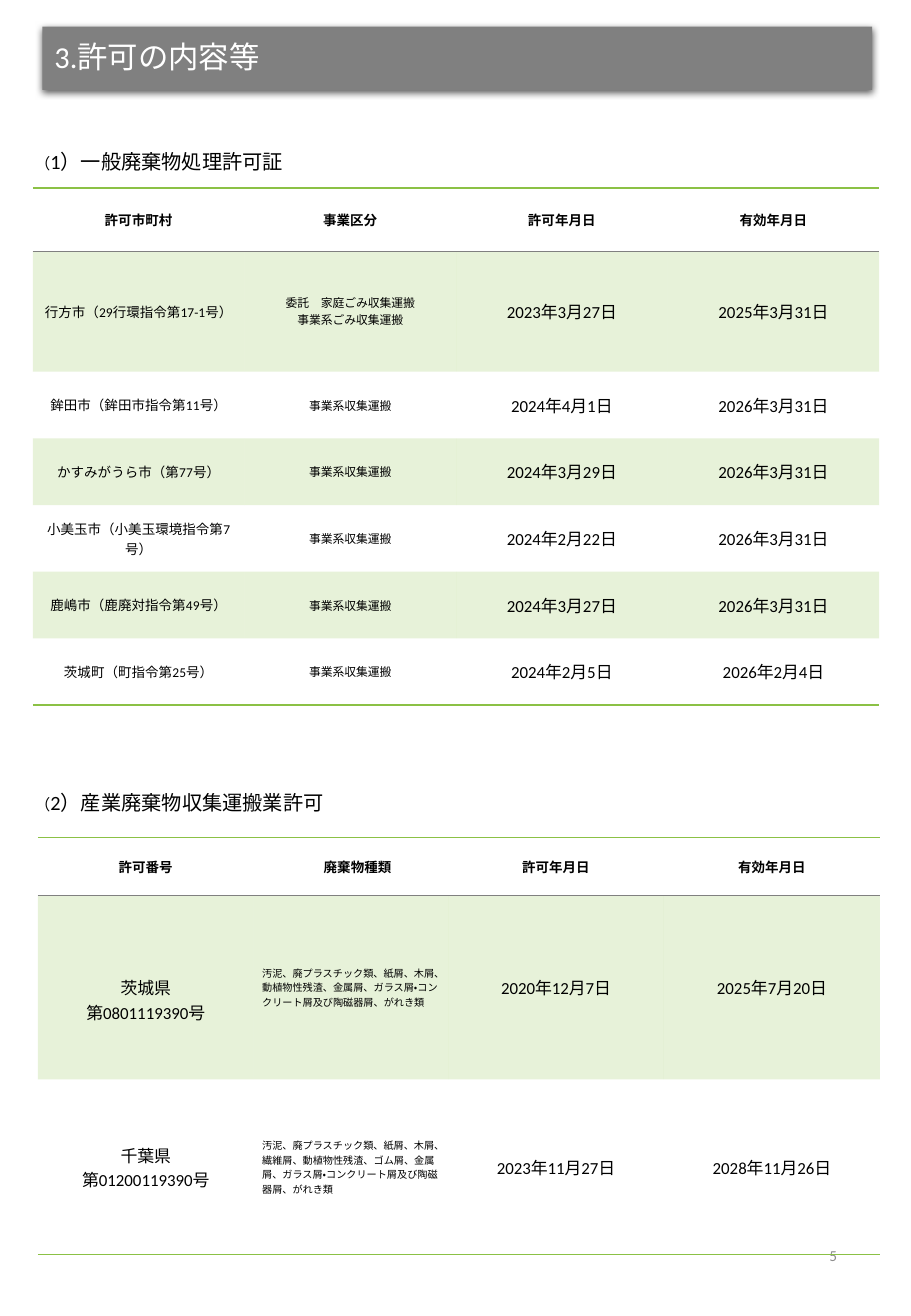
from lxml.etree import SubElement
from pptx import Presentation
from pptx.dml.color import RGBColor
from pptx.enum.lang import MSO_LANGUAGE_ID
from pptx.enum.shapes import MSO_SHAPE
from pptx.enum.text import MSO_ANCHOR, PP_ALIGN
from pptx.oxml.ns import qn
from pptx.util import Pt

GREEN = RGBColor(0x8B, 0xC1, 0x45)
GRAY = RGBColor(0x80, 0x80, 0x80)
PAGE_GRAY = RGBColor(0x8C, 0x8C, 0x8C)
BLACK = RGBColor(0x00, 0x00, 0x00)
WHITE = RGBColor(0xFF, 0xFF, 0xFF)

GENERAL_PERMITS = [
    ["許可市町村", "事業区分", "許可年月日", "有効年月日"],
    ["行方市（29行環指令第17-1号）", "委託　家庭ごみ収集運搬\n事業系ごみ収集運搬", "2023年3月27日", "2025年3月31日"],
    ["鉾田市（鉾田市指令第11号）", "事業系収集運搬", "2024年4月1日", "2026年3月31日"],
    ["かすみがうら市（第77号）", "事業系収集運搬", "2024年3月29日", "2026年3月31日"],
    ["小美玉市（小美玉環境指令第7号）", "事業系収集運搬", "2024年2月22日", "2026年3月31日"],
    ["鹿嶋市（鹿廃対指令第49号）", "事業系収集運搬", "2024年3月27日", "2026年3月31日"],
    ["茨城町（町指令第25号）", "事業系収集運搬", "2024年2月5日", "2026年2月4日"],
]
INDUSTRIAL_PERMITS = [
    ["許可番号", "　廃棄物種類", "許可年月日", "有効年月日"],
    ["茨城県\v第0801119390号",
     "汚泥、廃プラスチック類、紙屑、木屑、動植物性残渣、金属屑、ガラス屑・コンクリート屑及び陶磁器屑、がれき類",
     "2020年12月7日", "2025年7月20日"],
    ["千葉県\v第01200119390号",
     "汚泥、廃プラスチック類、紙屑、木屑、繊維屑、動植物性残渣、ゴム屑、金属屑、ガラス屑・コンクリート屑及び陶磁器屑、がれき類",
     "2023年11月27日", "2028年11月26日"],
]


def apply_format(target, values):
    for name, value in values.items():
        setattr(target, name, value)


class PermitSlide:
    font_name = "Calibri"
    header_size = 8

    def __init__(self, slide):
        self.slide = slide

    def style_run(self, run, size, color=BLACK, bold=False):
        apply_format(run.font, {
            "name": self.font_name, "size": Pt(size), "bold": bold,
            "language_id": MSO_LANGUAGE_ID.JAPANESE,
        })
        run.font.color.rgb = color

    def fill_frame(self, frame, runs, color=BLACK, **paragraph_format):
        apply_format(frame, {"word_wrap": True, "vertical_anchor": MSO_ANCHOR.MIDDLE})
        paragraph = frame.paragraphs[0]
        apply_format(paragraph, paragraph_format)
        for text, size in runs:
            run = paragraph.add_run()
            run.text = text
            self.style_run(run, size, color)

    def banner(self, text, left, top, width, height):
        banner = self.slide.shapes.add_shape(
            MSO_SHAPE.RECTANGLE, Pt(left), Pt(top), Pt(width), Pt(height))
        banner.fill.solid()
        banner.fill.fore_color.rgb = GRAY
        banner.line.fill.background()
        banner.shadow.inherit = False
        effects = banner.element.spPr.find(qn("a:effectLst"))
        shadow = SubElement(effects, qn("a:outerShdw"), blurRad=str(Pt(4.5)),
                            dist=str(Pt(1.5)), dir="5400000", rotWithShape="0")
        shade = SubElement(shadow, qn("a:srgbClr"), val=str(BLACK))
        SubElement(shade, qn("a:alpha"), val="63000")
        self.fill_frame(banner.text_frame, [(text, 18)], WHITE,
                        alignment=PP_ALIGN.LEFT, line_spacing=0.9)

    def text(self, runs, left, top, width, height, margins, color=BLACK, **paragraph_format):
        box = self.slide.shapes.add_textbox(Pt(left), Pt(top), Pt(width), Pt(height))
        side, edge = margins
        apply_format(box.text_frame, {
            "margin_left": Pt(side), "margin_right": Pt(side),
            "margin_top": Pt(edge), "margin_bottom": Pt(edge),
        })
        self.fill_frame(box.text_frame, runs, color, **paragraph_format)

    def heading(self, text, top, width, height):
        self.text([("（", 9), (text, 12)], 16.56, top, width, height, (4.32, 2.16),
                  line_spacing=0.9)

    def borders(self, cell, top, bottom):
        properties = cell._tc.get_or_add_tcPr()
        for tag, border in (("a:lnL", None), ("a:lnR", None), ("a:lnT", top), ("a:lnB", bottom)):
            if border is None:
                SubElement(SubElement(properties, qn(tag), w="0"), qn("a:noFill"))
                continue
            color, width = border
            line = SubElement(properties, qn(tag), w=str(Pt(width)))
            fill = SubElement(line, qn("a:solidFill"))
            SubElement(fill, qn("a:srgbClr"), val=str(color))

    def shade(self, cell, banded):
        if not banded:
            cell.fill.background()
            return
        cell.fill.solid()
        cell.fill.fore_color.rgb = GREEN
        tint = cell._tc.tcPr.find(qn("a:solidFill")).find(qn("a:srgbClr"))
        SubElement(tint, qn("a:alpha"), val="20000")

    def table(self, rows, left, top, widths, heights, sizes, side_margin,
              left_column=None, lowered_cell=None):
        table = self.slide.shapes.add_table(
            len(rows), len(widths), Pt(left), Pt(top), Pt(sum(widths)), Pt(sum(heights))).table
        apply_format(table, {"first_row": False, "horz_banding": False})
        for column, width in zip(table.columns, widths):
            column.width = Pt(width)
        for row, height in zip(table.rows, heights):
            row.height = Pt(height)
        outer, header_rule = (GREEN, 1), (GRAY, 0.5)
        edges = {0: outer, 1: header_rule, len(rows): outer}
        for r, texts in enumerate(rows):
            for c, text in enumerate(texts):
                cell = table.cell(r, c)
                lowering = 14.6 if (r, c) == lowered_cell else 0
                apply_format(cell, {
                    "margin_left": Pt(side_margin), "margin_right": Pt(side_margin),
                    "margin_top": Pt(2.16 + lowering), "margin_bottom": Pt(2.16),
                    "vertical_anchor": MSO_ANCHOR.MIDDLE,
                })
                self.borders(cell, edges.get(r), edges.get(r + 1))
                self.shade(cell, r % 2 == 1)
                cell.text_frame.text = text
                is_left = r > 0 and c == left_column
                for paragraph in cell.text_frame.paragraphs:
                    paragraph.alignment = PP_ALIGN.LEFT if is_left else PP_ALIGN.CENTER
                    for run in paragraph.runs:
                        self.style_run(run, sizes[c] if r else self.header_size, bold=r == 0)


def main():
    presentation = Presentation()
    apply_format(presentation, {"slide_width": Pt(540), "slide_height": Pt(779.76)})
    permits = PermitSlide(presentation.slides.add_slide(presentation.slide_layouts[6]))
    permits.table(GENERAL_PERMITS, 19.44, 111.5, [125.46] * 4, [37.3, 71.5] + [39.5] * 5,
                  [8, 7, 10, 10], 2.16)
    permits.text([("5", 9)], 381.6, 722.88, 121.68, 41.76, (7.2, 3.6), PAGE_GRAY,
                 alignment=PP_ALIGN.RIGHT)
    permits.heading("2）産業廃棄物収集運搬業許可", 456.48, 200.88, 39.6)
    permits.heading("1）一般廃棄物処理許可証", 73.44, 192.24, 46.08)
    permits.table(INDUSTRIAL_PERMITS, 22.4, 496.1, [128, 115.2, 128, 128], [34.6, 108.9, 103.7],
                  [10, 6, 10, 10], 5.04, left_column=1, lowered_cell=(1, 0))
    permits.banner("3.許可の内容等", 25.2, 15.84, 491.76, 37.44)
    presentation.save("out.pptx")


if __name__ == "__main__":
    main()
